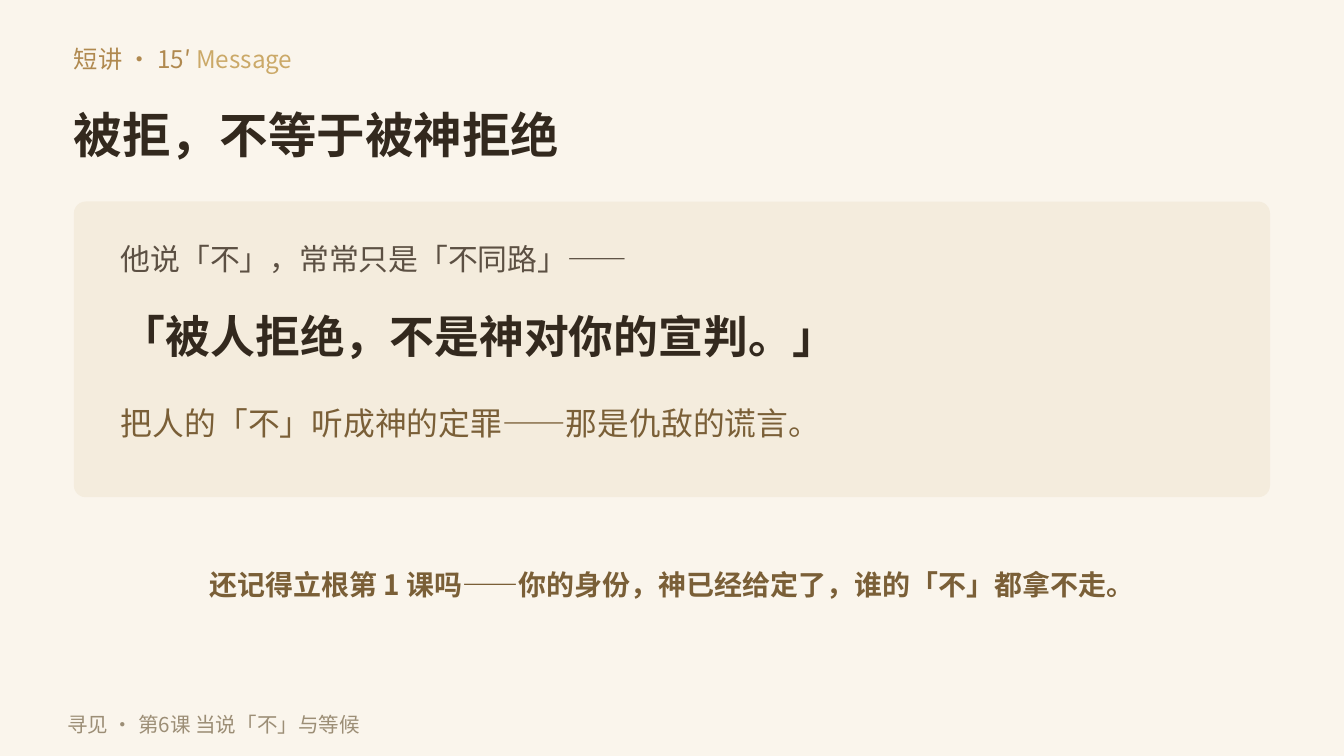
from lxml.etree import SubElement
from pptx import Presentation
from pptx.dml.color import RGBColor
from pptx.enum.shapes import MSO_SHAPE
from pptx.enum.text import MSO_ANCHOR, PP_ALIGN
from pptx.oxml.ns import qn
from pptx.util import Inches, Pt

WIDTH = 10
HEIGHT = WIDTH * 9 / 16
MARGIN = 0.055 * WIDTH
CONTENT_WIDTH = WIDTH - 2 * MARGIN
CARD_LEFT = 0.09 * WIDTH
CARD_TEXT_WIDTH = 0.82 * WIDTH
FONT = "Noto Sans CJK SC"

CREAM = RGBColor(0xFA, 0xF5, 0xEC)
SAND = RGBColor(0xF4, 0xEC, 0xDD)
INK = RGBColor(0x33, 0x29, 0x1E)
UMBER = RGBColor(0x5C, 0x50, 0x43)
BROWN = RGBColor(0x7A, 0x5F, 0x37)
BRONZE = RGBColor(0xB0, 0x89, 0x4F)
GOLD = RGBColor(0xCB, 0xA9, 0x68)
TAUPE = RGBColor(0x9C, 0x8E, 0x76)


def add_panel(s, kind, left, top, width, height, color):
    sp = s.shapes.add_shape(
        kind, Inches(left), Inches(top), Inches(width), Inches(height))
    sp.shadow.inherit = False
    sp.fill.solid()
    sp.fill.fore_color.rgb = color
    sp.line.fill.background()
    return sp


def add_run(p, text, size, color, bold=False):
    r = p.add_run()
    r.text = text
    r.font.size = Pt(size)
    r.font.bold = bold
    r.font.color.rgb = color
    r.font.name = FONT
    SubElement(r.font._element, qn("a:ea")).set("typeface", FONT)


def add_line(s, left, top, width, height, text, size, color,
             bold=False, align=PP_ALIGN.LEFT):
    sp = s.shapes.add_textbox(
        Inches(left), Inches(top), Inches(width), Inches(height))
    tf = sp.text_frame
    tf.word_wrap = True
    tf.vertical_anchor = MSO_ANCHOR.MIDDLE
    tf.margin_left = tf.margin_right = tf.margin_top = tf.margin_bottom = 0
    p = tf.paragraphs[0]
    p.alignment = align
    add_run(p, text, size, color, bold)
    return p


def add_header(s):
    p = add_line(s, MARGIN, 0.28, 0.85 * WIDTH, 0.32,
                 "短讲 · 15′ ", 13, BRONZE)
    add_run(p, "Message", 13, GOLD)
    add_line(s, MARGIN, 0.75, 0.9 * WIDTH, 0.5,
             "被拒，不等于被神拒绝", 26, INK, True)


def add_card(s):
    card = add_panel(s, MSO_SHAPE.ROUNDED_RECTANGLE,
                     MARGIN, 1.5, CONTENT_WIDTH, 2.2, SAND)
    card.adjustments[0] = 0.04
    lines = [
        (1.75, 0.35, "他说「不」，常常只是「不同路」——", 16, UMBER, False),
        (2.25, 0.5, "「被人拒绝，不是神对你的宣判。」", 24, INK, True),
        (2.95, 0.4, "把人的「不」听成神的定罪——那是仇敌的谎言。", 17, BROWN, False),
    ]
    for top, height, text, size, color, bold in lines:
        add_line(s, CARD_LEFT, top, CARD_TEXT_WIDTH, height,
                 text, size, color, bold)


def main():
    prs = Presentation()
    prs.slide_width, prs.slide_height = Inches(WIDTH), Inches(HEIGHT)
    s = prs.slides.add_slide(prs.slide_layouts[6])
    add_panel(s, MSO_SHAPE.RECTANGLE, 0, 0, WIDTH, HEIGHT, CREAM)
    add_header(s)
    add_card(s)
    add_line(s, MARGIN, 4.15, CONTENT_WIDTH, 0.4,
             "还记得立根第 1 课吗——你的身份，神已经给定了，谁的「不」都拿不走。",
             15, BROWN, True, PP_ALIGN.CENTER)
    add_line(s, 0.05 * WIDTH, 5.25, 0.75 * WIDTH, 0.28,
             "寻见 · 第6课 当说「不」与等候", 11, TAUPE)
    prs.save("out.pptx")


if __name__ == "__main__":
    main()
